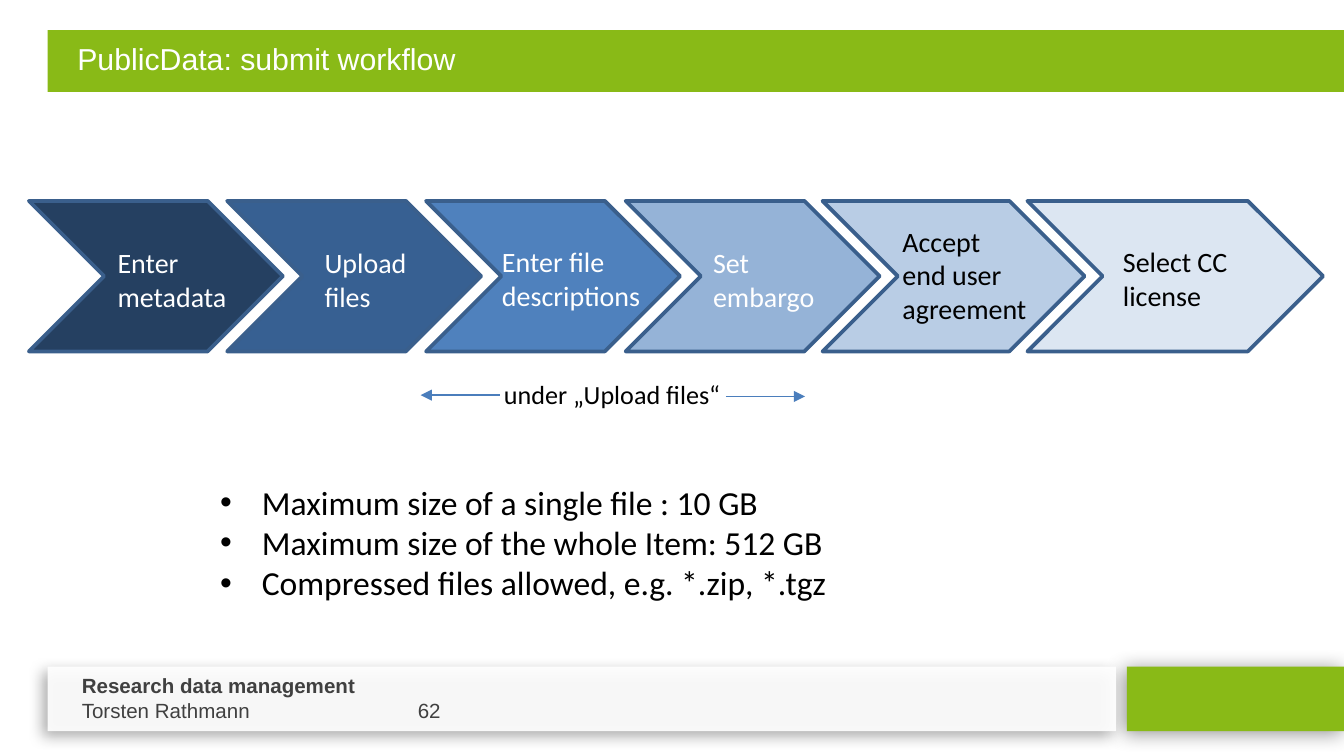
from lxml import etree
from pptx import Presentation
from pptx.dml.color import RGBColor
from pptx.enum.shapes import MSO_CONNECTOR, MSO_SHAPE
from pptx.enum.text import MSO_ANCHOR, MSO_AUTO_SIZE, PP_ALIGN
from pptx.oxml.ns import qn
from pptx.util import Pt

RECT, CHEVRON = MSO_SHAPE.RECTANGLE, MSO_SHAPE.CHEVRON
STRAIGHT = MSO_CONNECTOR.STRAIGHT
TOP = MSO_ANCHOR.TOP
NO_FIT, GROW = MSO_AUTO_SIZE.NONE, MSO_AUTO_SIZE.SHAPE_TO_FIT_TEXT
LEFT, CENTER = PP_ALIGN.LEFT, PP_ALIGN.CENTER

PX = 4572  # 200 px to the inch
COLORS = {
    "green": "89BA17", "white": "FFFFFF", "black": "000000", "gray": "404040",
    "outline": "3A5F8C", "arrow": "4B7EBC",
    "step1": "254061", "step2": "376092", "step3": "4F81BD",
    "step4": "95B3D7", "step5": "B9CDE5", "step6": "DCE6F2",
}


def rgb(name):
    return RGBColor.from_string(COLORS[name])


def px(*values):
    return [v * PX for v in values]


def sub(parent, tag, **attrs):
    return etree.SubElement(parent, qn(tag), {k: str(v) for k, v in attrs.items()})


class Deck:
    def __init__(self, width, height):
        self.prs = Presentation()
        self.prs.slide_width, self.prs.slide_height = px(width, height)
        self.s = None

    def new_slide(self):
        self.s = self.prs.slides.add_slide(self.prs.slide_layouts[5])

    def style(self, p, size, color, font, align=LEFT, bold=False):
        p.alignment = align
        for r in p.runs:
            r.font.size = Pt(size)
            r.font.name = font
            r.font.bold = bold
            r.font.color.rgb = rgb(color)

    def insets(self, tf, left, top, right, bottom):
        tf.margin_left, tf.margin_top, tf.margin_right, tf.margin_bottom = px(
            left, top, right, bottom)

    def title(self, box, text):
        sp = self.s.shapes.title
        sp.left, sp.top, sp.width, sp.height = px(*box)
        sp.element.getparent().append(sp.element)  # in front of the bar
        tf = sp.text_frame
        tf.text = text
        tf.auto_size = NO_FIT
        tf.vertical_anchor = TOP
        self.insets(tf, 20, 16, 20, 10)
        p = tf.paragraphs[0]
        p._p.get_or_add_pPr().set("marL", str(24 * PX))
        self.style(p, 16.2, "white", "Arial")

    def shape(self, kind, box, fill, line=None, alpha=None, shadow=None):
        sp = self.s.shapes.add_shape(kind, *px(*box))
        sp.shadow.inherit = False
        sp.fill.solid()
        sp.fill.fore_color.rgb = rgb(fill)
        if alpha:
            color = sp.element.spPr.find(".//" + qn("a:srgbClr"))
            sub(color, "a:alpha", val=alpha * 1000)
        if line:
            sp.line.color.rgb = rgb(line)
            sp.line.width = Pt(2)
        else:
            sp.line.fill.background()
        if shadow:
            opacity, blur, dist, angle = shadow
            effects = sp.element.spPr.find(qn("a:effectLst"))
            outer = sub(effects, "a:outerShdw", blurRad=Pt(blur), dist=Pt(dist),
                        dir=angle * 60000, algn="ctr", rotWithShape=0)
            color = sub(outer, "a:srgbClr", val=COLORS["black"])
            sub(color, "a:alpha", val=opacity * 1000)

    def text(self, box, text, size, color="black", font="Calibri", align=LEFT,
             wrap=False, insets=(20, 10, 20, 10), bullet=False, tab=None):
        tf = self.s.shapes.add_textbox(*px(*box)).text_frame
        tf.text = text
        tf.word_wrap = wrap
        tf.auto_size = GROW
        self.insets(tf, *insets)
        for p in tf.paragraphs:
            pPr = p._p.get_or_add_pPr()
            if bullet:
                pPr.set("marL", str(62 * PX))
                pPr.set("indent", str(-62 * PX))
                sub(pPr, "a:buFont", typeface="Arial")
                sub(pPr, "a:buChar", char="•")
            if tab:
                sub(sub(pPr, "a:tabLst"), "a:tab", pos=tab * PX, algn="l")
            self.style(p, size, color, font, align)
        return tf

    def arrow(self, x1, y1, x2, y2):
        c = self.s.shapes.add_connector(STRAIGHT, *px(x1, y1, x2, y2))
        c.line.color.rgb = rgb("arrow")
        c.line.width = Pt(0.75)
        sub(c.line._get_or_add_ln(), "a:tailEnd", type="triangle")
        sub(c.element.spPr, "a:effectLst")


def main():
    deck = Deck(2000, 1125)
    deck.new_slide()

    # Footer
    deck.shape(RECT, (1677, 992, 323, 96), "green", shadow=(42, 10.8, 2, 142))
    deck.shape(RECT, (71, 992, 1590, 96), "white", alpha=91, shadow=(34, 7.5, 4, 145))
    footer = deck.text((102, 992, 1196, 94),
                       "Research data management\nTorsten Rathmann\t62",
                       11, "gray", "Arial", wrap=True, tab=500)
    footer.paragraphs[0].runs[0].font.bold = True

    # Title bar
    deck.shape(RECT, (71, 45, 1938, 92), "green")
    deck.title((71, 44, 1938, 70), "PublicData: submit workflow")

    # Workflow steps: chevron left and width, label box, label, label colour
    steps = [
        (43, 378, (161, 358, 194, 116), "Enter\nmetadata", "white"),
        (338, 378, (469, 358, 154, 116), "Upload\nfiles", "white"),
        (634, 378, (733, 356, 238, 116), "Enter file\ndescriptions", "white"),
        (931, 378, (1047, 358, 182, 116), "Set\nembargo", "white"),
        (1224, 390, (1329, 326, 216, 166), "Accept\nend user\nagreement", "black"),
        (1529, 440, (1657, 356, 198, 116), "Select CC\nlicense", "black"),
    ]
    for i, (left, width, *_) in enumerate(steps, 1):
        deck.shape(CHEVRON, (left, 299, width, 224), f"step{i}", "outline")
    for _, _, box, label, color in steps:
        deck.text(box, label, 15, color, insets=(14, 8, 14, 8))

    # Span of the upload step
    deck.arrow(744, 588, 626, 588)
    deck.arrow(1080, 590, 1198, 590)
    deck.text((728, 553, 366, 68), "under „Upload files“", 14, align=CENTER)

    # Limits
    limits = ["Maximum size of a single file : 10 GB",
              "Maximum size of the whole Item: 512 GB",
              "Compressed files allowed, e.g. *.zip, *.tgz"]
    deck.text((308, 707, 980, 202), "\n".join(limits), 18, bullet=True, wrap=True)

    deck.prs.save("out.pptx")


if __name__ == "__main__":
    main()
